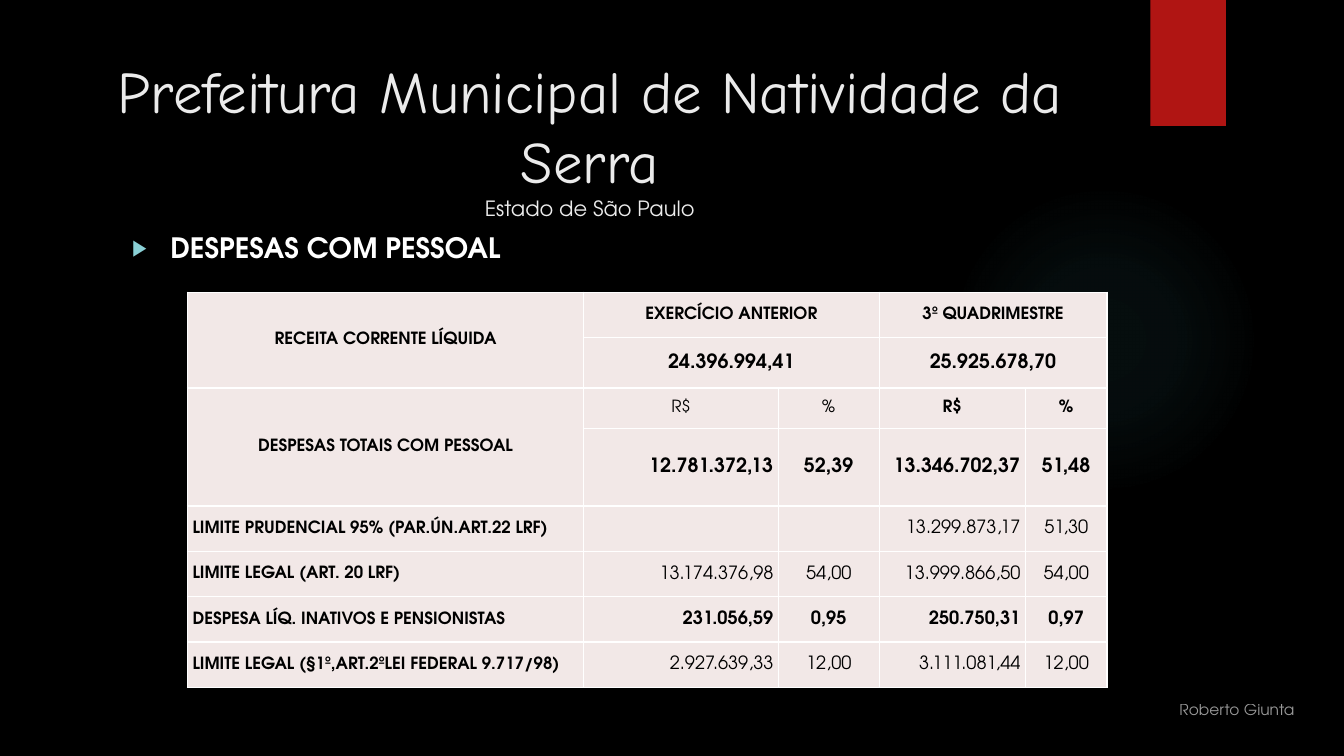
from dataclasses import dataclass
from itertools import product
from typing import NamedTuple

from lxml.etree import SubElement
from pptx import Presentation
from pptx.dml.color import RGBColor
from pptx.enum.shapes import MSO_SHAPE as Preset
from pptx.enum.text import MSO_ANCHOR as Anchor, MSO_AUTO_SIZE as AutoSize, PP_ALIGN as Align
from pptx.oxml import parse_xml
from pptx.oxml.ns import nsdecls, qn
from pptx.util import Emu, Pt

PX = 9144  # 100 px to the inch


@dataclass(frozen=True)
class Theme:
    heading_font: str = "Comic Neue"
    text_font: str = "TeX Gyre Adventor"
    background: str = "000000"
    white: str = "FFFFFF"
    title: str = "EBEBEB"
    ribbon: str = "B01513"
    glow: str = "50B9C1"
    bullet: str = "8AD0D6"
    cell: str = "F2E8E7"
    ink: str = "000000"
    title_size: int = 42
    subtitle_size: int = 15
    list_size: int = 20
    label_size: int = 12
    value_size: int = 13
    total_size: int = 14
    footer_size: int = 11


THEME = Theme()


class Box(NamedTuple):
    left: int
    top: int
    width: int
    height: int

    def emu(self) -> list[Emu]:
        return [Emu(length * PX) for length in self]


class Entry(NamedTuple):
    """A table cell with text, which may span rows and columns."""
    row: int
    column: int
    text: str
    size: int = THEME.label_size
    bold: bool = True
    align: Align = Align.CENTER
    rows: int = 1
    columns: int = 1


class Figures(NamedTuple):
    """A labelled table row with amounts and percentages."""
    label: str
    values: tuple[str, str, str, str]
    size: int = THEME.value_size
    bold: bool = False


COLUMNS = (393, 193, 100, 145, 81)
ROWS = (45, 50, 40, 77, 45, 45, 45, 45)

HEADINGS = [
    Entry(0, 0, "RECEITA CORRENTE LÍQUIDA", rows=2),
    Entry(0, 1, "EXERCÍCIO ANTERIOR", columns=2),
    Entry(0, 3, "3º QUADRIMESTRE", columns=2),
    Entry(1, 1, "24.396.994,41", size=THEME.total_size, columns=2),
    Entry(1, 3, "25.925.678,70", size=THEME.total_size, columns=2),
    Entry(2, 0, "DESPESAS TOTAIS COM PESSOAL", rows=2),
    Entry(2, 1, "R$", bold=False),
    Entry(2, 2, "%", bold=False),
    Entry(2, 3, "R$"),
    Entry(2, 4, "%"),
]
FIGURES = [
    Figures("", ("12.781.372,13", "52,39", "13.346.702,37", "51,48"), THEME.total_size, True),
    Figures("LIMITE PRUDENCIAL 95% (PAR.ÚN.ART.22 LRF)", ("", "", "13.299.873,17", "51,30")),
    Figures("LIMITE LEGAL (ART. 20 LRF)", ("13.174.376,98", "54,00", "13.999.866,50", "54,00")),
    Figures("DESPESA LÍQ. INATIVOS E PENSIONISTAS", ("231.056,59", "0,95", "250.750,31", "0,97"),
            bold=True),
    Figures("LIMITE LEGAL (§1º,ART.2ºLEI FEDERAL 9.717/98)",
            ("2.927.639,33", "12,00", "3.111.081,44", "12,00")),
]
FIRST_FIGURES_ROW = 3


def add_span(para, text: str, *, size: int, color: str, font: str = THEME.text_font,
             bold: bool = False):
    span = para.add_run()
    span.text = text
    span.font.size = Pt(size)
    span.font.name = font
    span.font.bold = bold
    span.font.color.rgb = RGBColor.from_string(color)
    return span


def place(shape, box: Box) -> None:
    shape.left, shape.top, shape.width, shape.height = box.emu()


def prepare_frame(frame, anchor: Anchor) -> None:
    frame.word_wrap = True
    frame.auto_size = AutoSize.NONE
    frame.vertical_anchor = anchor


def add_plain_shape(page, preset: Preset, box: Box, color: str):
    shape = page.shapes.add_shape(preset, *box.emu())
    shape.shadow.inherit = False
    shape.fill.solid()
    shape.fill.fore_color.rgb = RGBColor.from_string(color)
    shape.line.fill.background()
    return shape


def add_glow(page) -> None:
    """Draw a round light that fades out to its edge."""
    glow = add_plain_shape(page, Preset.OVAL, Box(941, 183, 308, 308), THEME.glow)
    stops = "".join(
        f'<a:gs pos="{at * 1000}"><a:srgbClr val="{THEME.glow}">'
        f'<a:alpha val="{alpha * 1000}"/></a:srgbClr></a:gs>'
        for at, alpha in ((0, 7), (36, 6), (69, 0)))
    gradient = parse_xml(
        f'<a:gradFill {nsdecls("a")}><a:gsLst>{stops}</a:gsLst><a:path path="circle">'
        '<a:fillToRect l="50000" t="50000" r="50000" b="50000"/></a:path></a:gradFill>')
    properties = glow.element.spPr
    properties.replace(properties.find(qn("a:solidFill")), gradient)


def fill_title(page) -> None:
    title = page.shapes.title
    place(title, Box(71, 49, 1028, 153))
    prepare_frame(title.text_frame, Anchor.TOP)
    para = title.text_frame.paragraphs[0]
    para.alignment = Align.CENTER
    add_span(para, "Prefeitura Municipal de Natividade da Serra",
             size=THEME.title_size, color=THEME.title, font=THEME.heading_font)
    para.add_line_break()
    add_span(para, "Estado de São Paulo", size=THEME.subtitle_size, color=THEME.title)


def fill_list(page) -> None:
    body = page.placeholders[1]
    place(body, Box(121, 224, 978, 459))
    prepare_frame(body.text_frame, Anchor.TOP)
    para = body.text_frame.paragraphs[0]
    properties = para._p.get_or_add_pPr()
    properties.set("marL", str(38 * PX))
    properties.set("indent", str(-38 * PX))
    SubElement(SubElement(properties, qn("a:buClr")), qn("a:srgbClr"), val=THEME.bullet)
    SubElement(properties, qn("a:buSzPct"), val="80000")
    SubElement(properties, qn("a:buChar"), char="▶")
    para.space_before = Pt(0)
    add_span(para, "DESPESAS COM PESSOAL", size=THEME.list_size, color=THEME.white, bold=True)


def style_cell(cell) -> None:
    properties = cell._tc.get_or_add_tcPr()
    for side in ("lnL", "lnR", "lnT", "lnB"):
        line = SubElement(properties, qn(f"a:{side}"), w=str(Pt(1)))
        SubElement(SubElement(line, qn("a:solidFill")), qn("a:srgbClr"), val=THEME.white)
    cell.fill.solid()
    cell.fill.fore_color.rgb = RGBColor.from_string(THEME.cell)
    cell.margin_left = cell.margin_right = Emu(5 * PX)
    cell.margin_top = cell.margin_bottom = 0
    cell.vertical_anchor = Anchor.MIDDLE


def figure_entries() -> list[Entry]:
    entries = []
    for row, figures in enumerate(FIGURES, FIRST_FIGURES_ROW):
        entries.append(Entry(row, 0, figures.label, align=Align.LEFT))
        for column, value in enumerate(figures.values, 1):
            align = Align.RIGHT if column % 2 else Align.CENTER
            entries.append(Entry(row, column, value, figures.size, figures.bold, align))
    return [entry for entry in entries if entry.text]


def add_spending_table(page) -> None:
    box = Box(186, 290, sum(COLUMNS), sum(ROWS))
    table = page.shapes.add_table(len(ROWS), len(COLUMNS), *box.emu()).table
    table.first_row = table.horz_banding = False
    for column, width in zip(table.columns, COLUMNS):
        column.width = Emu(width * PX)
    for row, height in zip(table.rows, ROWS):
        row.height = Emu(height * PX)
    for row, column in product(range(len(ROWS)), range(len(COLUMNS))):
        style_cell(table.cell(row, column))
    for entry in HEADINGS + figure_entries():
        cell = table.cell(entry.row, entry.column)
        if entry.rows * entry.columns > 1:
            cell.merge(table.cell(entry.row + entry.rows - 1, entry.column + entry.columns - 1))
        para = cell.text_frame.paragraphs[0]
        para.alignment = entry.align
        add_span(para, entry.text, size=entry.size, color=THEME.ink, bold=entry.bold)


def add_footer(page) -> None:
    frame = page.shapes.add_textbox(*Box(872, 685, 422, 33).emu()).text_frame
    prepare_frame(frame, Anchor.BOTTOM)
    para = frame.paragraphs[0]
    para.alignment = Align.RIGHT
    span = add_span(para, "Roberto Giunta", size=THEME.footer_size, color=THEME.white)
    SubElement(next(span._r.iter(qn("a:srgbClr"))), qn("a:alpha"), val="60000")


def main() -> None:
    deck = Presentation()
    deck.slide_width, deck.slide_height = Emu(1333 * PX), Emu(750 * PX)
    page = deck.slides.add_slide(deck.slide_layouts[1])
    page.background.fill.solid()
    page.background.fill.fore_color.rgb = RGBColor.from_string(THEME.background)
    add_glow(page)
    add_plain_shape(page, Preset.RECTANGLE, Box(1141, 0, 75, 125), THEME.ribbon)
    fill_title(page)
    fill_list(page)
    add_spending_table(page)
    add_footer(page)
    deck.save("out.pptx")


if __name__ == "__main__":
    main()
